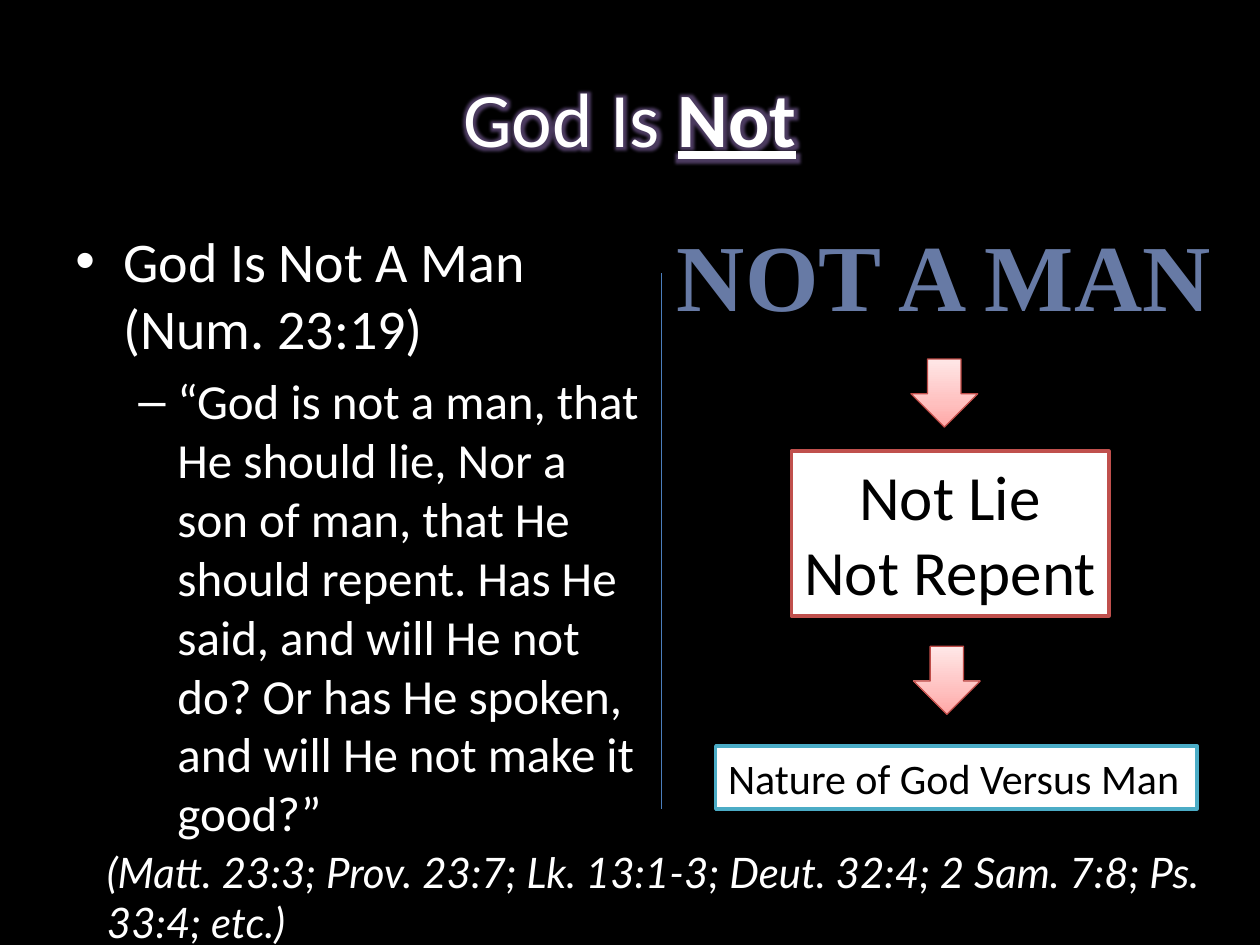
"""Build the slide "God Is Not"."""
from copy import deepcopy

from lxml.etree import SubElement
from pptx import Presentation
from pptx.dml.color import RGBColor
from pptx.enum.shapes import MSO_CONNECTOR, MSO_SHAPE
from pptx.enum.text import MSO_ANCHOR, PP_ALIGN
from pptx.oxml import parse_xml
from pptx.oxml.ns import nsdecls, qn
from pptx.util import Inches, Pt

BLACK = RGBColor(0x00, 0x00, 0x00)
WHITE = RGBColor(0xFF, 0xFF, 0xFF)
SLATE = RGBColor(0x67, 0x7A, 0xA5)
RED = RGBColor(0xC0, 0x50, 0x4D)
ARROW_RED = RGBColor(0xBF, 0x4C, 0x48)
TEAL = RGBColor(0x4B, 0xAC, 0xC6)
BLUE = RGBColor(0x4B, 0x7E, 0xBC)
PURPLE = RGBColor(0x80, 0x64, 0xA2)
ARROW_STOPS = [
    (0, RGBColor(0xFF, 0xA6, 0xA5)),
    (0.35, RGBColor(0xFF, 0xC0, 0xBF)),
    (1, RGBColor(0xFF, 0xE7, 0xE7)),
]

TITLE = ("God Is ", "Not")
POINTS = [
    ("God Is Not A Man (Num. 23:19)", 32, "•", 0.38, 0.38),
    ("“God is not a man, that He should lie, Nor a son of man, that He should "
     "repent. Has He said, and will He not do? Or has He spoken, and will He "
     "not make it good?”", 28, "–", 0.81, 0.31),
]
HEADING = "NOT A MAN"
REFERENCES = ("(Matt. 23:3; Prov. 23:7; Lk. 13:1-3; Deut. 32:4; 2 Sam. 7:8; "
              "Ps. 33:4; etc.)")
BOXES = [
    ((6.28, 3.58, 2.52, 1.31), ["Not Lie", "Not Repent"], 36, RED, PP_ALIGN.CENTER),
    ((5.68, 5.92, 3.82, 0.5), ["Nature of God Versus Man"], 24, TEAL, PP_ALIGN.LEFT),
]
ARROWS = [(7.23, 2.85), (7.25, 5.13)]
ARROW_SIZE = (0.53, 0.54)


def inches(values):
    return [Inches(value) for value in values]


def style(paragraph, size, color=WHITE, face="Calibri", align=PP_ALIGN.LEFT):
    paragraph.alignment = align
    font = paragraph.font
    font.size, font.name = Pt(size), face
    font.color.rgb = color
    return font


def add_text(slide, place, wrap=True):
    frame = slide.shapes.add_textbox(*inches(place)).text_frame
    frame.word_wrap = wrap
    return frame


def add_title(slide):
    frame = add_text(slide, (0.5, 0.3, 9, 1.25))
    frame.vertical_anchor = MSO_ANCHOR.MIDDLE
    paragraph = frame.paragraphs[0]
    style(paragraph, 44, align=PP_ALIGN.CENTER)
    for words in TITLE:
        run = paragraph.add_run()
        run.text = words
        run.font._element.append(parse_xml(
            f'<a:effectLst {nsdecls("a")}><a:glow rad="{Pt(8)}">'
            f'<a:srgbClr val="{PURPLE}"><a:alpha val="60000"/></a:srgbClr>'
            '</a:glow></a:effectLst>'))
    run.font.bold = run.font.underline = True


def add_points(slide):
    frame = add_text(slide, (0.5, 1.75, 4.72, 5.42))
    for level, (words, size, bullet, margin, hang) in enumerate(POINTS):
        paragraph = frame.add_paragraph() if level else frame.paragraphs[0]
        paragraph.text, paragraph.level = words, level
        paragraph.space_before = Pt(size * 0.2)
        style(paragraph, size)
        properties = paragraph._p.get_or_add_pPr()
        properties.set("marL", str(Inches(margin)))
        properties.set("indent", str(-Inches(hang)))
        face = SubElement(properties, qn("a:buFont"), typeface="Arial")
        mark = SubElement(properties, qn("a:buChar"), char=bullet)
        for part in (face, mark):
            properties.find(qn("a:defRPr")).addprevious(part)


def add_arrow(slide, corner):
    arrow = slide.shapes.add_shape(MSO_SHAPE.DOWN_ARROW, *inches(corner + ARROW_SIZE))
    arrow.shadow.inherit = False
    arrow.line.color.rgb, arrow.line.width = ARROW_RED, Pt(0.75)
    arrow.fill.gradient()
    arrow.fill.gradient_angle = 90
    first = arrow._element.spPr.find(".//" + qn("a:gs"))
    first.addnext(deepcopy(first))
    for stop, (position, color) in zip(arrow.fill.gradient_stops, ARROW_STOPS):
        stop.position, stop.color.rgb = position, color


def add_box(slide, place, lines, size, border, align):
    box = slide.shapes.add_shape(MSO_SHAPE.RECTANGLE, *inches(place))
    box.shadow.inherit = False
    box.fill.solid()
    box.fill.fore_color.rgb = WHITE
    box.line.color.rgb, box.line.width = border, Pt(2)
    frame = box.text_frame
    frame.word_wrap, frame.vertical_anchor = False, MSO_ANCHOR.TOP
    frame.text = "\n".join(lines)
    for paragraph in frame.paragraphs:
        style(paragraph, size, BLACK, align=align)


def main():
    deck = Presentation()
    deck.slide_width, deck.slide_height = Inches(10), Inches(7.5)
    slide = deck.slides.add_slide(deck.slide_layouts[6])
    slide.background.fill.solid()
    slide.background.fill.fore_color.rgb = BLACK

    add_title(slide)
    add_points(slide)

    heading = add_text(slide, (5.25, 1.67, 4.48, 1.01), wrap=False).paragraphs[0]
    heading.text = HEADING
    style(heading, 54, SLATE, "Times New Roman", PP_ALIGN.CENTER).bold = True

    for corner in ARROWS:
        add_arrow(slide, corner)
    for box in BOXES:
        add_box(slide, *box)

    references = add_text(slide, (0.75, 6.67, 8.99, 0.5)).paragraphs[0]
    references.text = REFERENCES
    style(references, 24, face="Lato").italic = True

    divider = slide.shapes.add_connector(
        MSO_CONNECTOR.STRAIGHT, *inches((5.25, 2.17, 5.25, 6.42)))
    divider.line.color.rgb, divider.line.width = BLUE, Pt(0.75)
    SubElement(divider._element.spPr, qn("a:effectLst"))

    deck.save("out.pptx")


if __name__ == "__main__":
    main()
